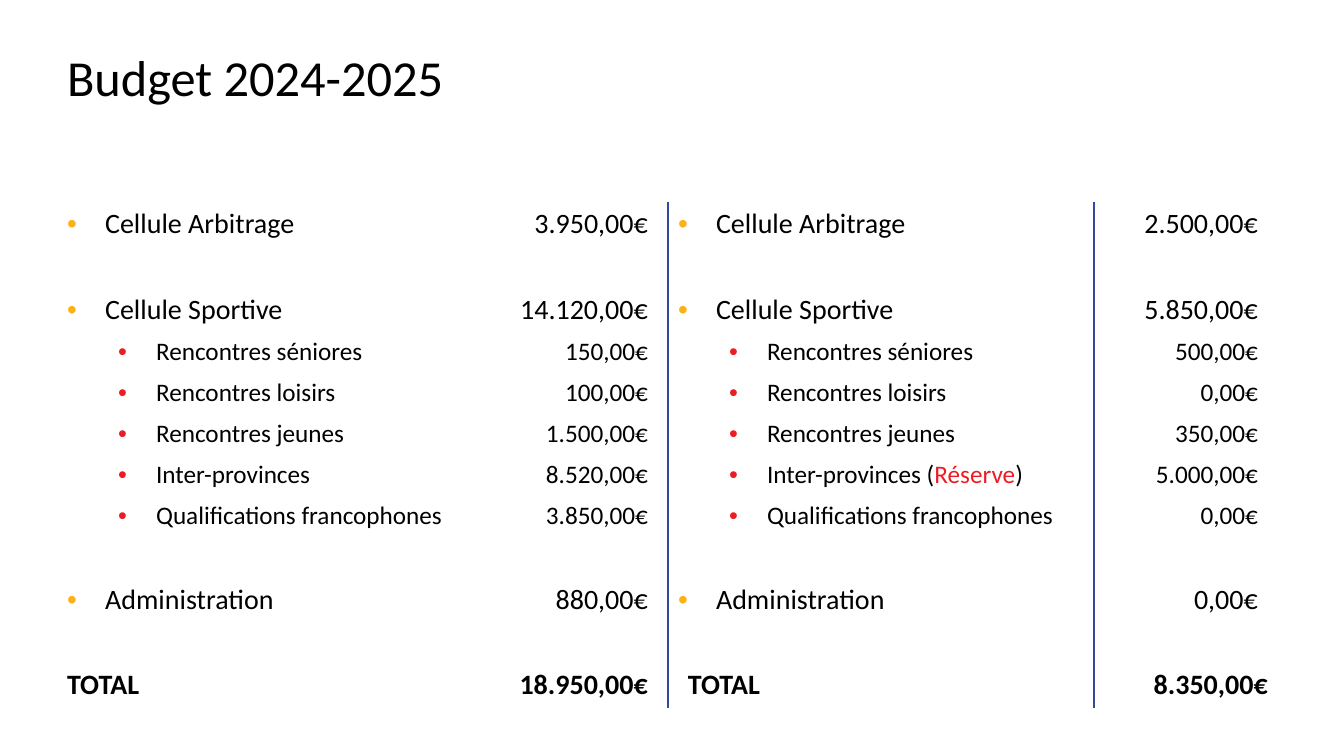
"""Build the 2024-2025 budget slide."""
from dataclasses import dataclass

from lxml.etree import SubElement
from pptx import Presentation
from pptx.dml.color import RGBColor
from pptx.enum.text import MSO_ANCHOR, PP_ALIGN
from pptx.oxml import parse_xml
from pptx.oxml.ns import nsdecls, qn
from pptx.util import Pt

EMU_PER_PX = 914400 / 100.8
PLAIN_TABLE_STYLE = "{2D5ABB26-0587-4C30-8999-92F81FD0307C}"


@dataclass(frozen=True)
class Theme:
    """Colours and type sizes of the slide."""
    font: str = "Calibri"
    text: str = "000000"
    accent: str = "ED1C24"
    group_bullet: str = "FCB116"
    rule: str = "34489E"
    title_size: int = 36
    group_size: int = 20
    item_size: int = 18


@dataclass(frozen=True)
class Entry:
    """One budget row, with an amount for each half of the table."""
    kind: str
    label: str
    left: str
    right: str
    right_note: str = ""


BUDGET = [
    Entry("group", "Cellule Arbitrage", "3.950,00€", "2.500,00€"),
    None,
    Entry("group", "Cellule Sportive", "14.120,00€", "5.850,00€"),
    Entry("item", "Rencontres séniores", "150,00€", "500,00€"),
    Entry("item", "Rencontres loisirs", "100,00€", "0,00€"),
    Entry("item", "Rencontres jeunes", "1.500,00€", "350,00€"),
    Entry("item", "Inter-provinces", "8.520,00€", "5.000,00€", "Réserve"),
    Entry("item", "Qualifications francophones", "3.850,00€", "0,00€"),
    None,
    Entry("group", "Administration", "880,00€", "0,00€"),
    None,
    Entry("total", "TOTAL", "18.950,00€", "8.350,00€"),
]
COLUMN_WIDTHS = [421, 190, 426, 184]
ROW_HEIGHT = 41
RULED_SIDES = {1: ["lnR"], 2: ["lnR", "lnL"], 3: ["lnL"]}


def px(length):
    """Turn pixels into EMU."""
    return round(length * EMU_PER_PX)


class SlideBuilder:
    """Holds the theme and the slide being filled."""

    def __init__(self, slide, theme):
        self.slide = slide
        self.theme = theme

    def style(self, paragraph, size, bold=False):
        """Set the font of a whole paragraph."""
        font = paragraph.font
        font.name, font.size, font.bold = self.theme.font, Pt(size), bold
        font.color.rgb = RGBColor.from_string(self.theme.text)

    def title(self, text, left, top, width, height):
        """Place and format the title placeholder."""
        title = self.slide.shapes.title
        title.left, title.top = px(left), px(top)
        title.width, title.height = px(width), px(height)
        frame = title.text_frame
        frame.text = text
        frame.vertical_anchor = MSO_ANCHOR.MIDDLE
        paragraph = frame.paragraphs[0]
        paragraph.alignment = PP_ALIGN.LEFT
        paragraph.line_spacing = 0.9
        self.style(paragraph, self.theme.title_size)

    def bullet(self, paragraph, indent, color):
        """Give a paragraph a coloured hanging bullet."""
        properties = paragraph._p.get_or_add_pPr()
        properties.set("marL", str(px(indent)))
        properties.set("indent", str(px(-38)))
        bullet_color = SubElement(properties, qn("a:buClr"))
        SubElement(bullet_color, qn("a:srgbClr"), val=color)
        SubElement(properties, qn("a:buFont"), typeface="Arial")
        SubElement(properties, qn("a:buChar"), char="•")

    def border(self, cell, side):
        """Draw a thin rule on one side of a cell."""
        cell._tc.get_or_add_tcPr().insert(0, parse_xml(
            f'<a:{side} {nsdecls("a")} w="12700"><a:solidFill>'
            f'<a:srgbClr val="{self.theme.rule}"/></a:solidFill></a:{side}>'))

    def label(self, cell, entry, note=""):
        """Write a row label, with an optional coloured note in brackets."""
        paragraph = cell.text_frame.paragraphs[0]
        if entry.kind == "group":
            self.bullet(paragraph, 38, self.theme.group_bullet)
        elif entry.kind == "item":
            paragraph.level = 1
            self.bullet(paragraph, 89, self.theme.accent)
        parts = [f"{entry.label} (", note, ")"] if note else [entry.label]
        for part in parts:
            run = paragraph.add_run()
            run.text = part
            if part == note:
                run.font.color.rgb = RGBColor.from_string(self.theme.accent)
        self.style_entry(paragraph, entry)

    def amount(self, cell, entry, text):
        """Write a right-aligned amount."""
        cell.margin_right = px(20)
        paragraph = cell.text_frame.paragraphs[0]
        paragraph.alignment = PP_ALIGN.RIGHT
        paragraph.add_run().text = text
        self.style_entry(paragraph, entry)

    def style_entry(self, paragraph, entry):
        """Set the font that suits the kind of row."""
        theme = self.theme
        size = theme.item_size if entry.kind == "item" else theme.group_size
        self.style(paragraph, size, entry.kind == "total")

    def budget_table(self, entries, left, top):
        """Add the two-part budget table."""
        frame = self.slide.shapes.add_table(
            len(entries), len(COLUMN_WIDTHS), px(left), px(top),
            px(sum(COLUMN_WIDTHS)), px(ROW_HEIGHT * len(entries)))
        table = frame.table
        table.first_row = table.horz_banding = False
        table._tbl.tblPr.find(qn("a:tableStyleId")).text = PLAIN_TABLE_STYLE
        for column, width in zip(table.columns, COLUMN_WIDTHS):
            column.width = px(width)
        for row, entry in zip(table.rows, entries):
            row.height = px(ROW_HEIGHT)
            cells = list(row.cells)
            for index, cell in enumerate(cells):
                cell.fill.background()
                for side in RULED_SIDES.get(index, []):
                    self.border(cell, side)
            if entry is None:
                continue
            self.label(cells[0], entry)
            self.amount(cells[1], entry, entry.left)
            self.label(cells[2], entry, entry.right_note)
            self.amount(cells[3], entry, entry.right)
            if entry.kind == "total":
                cells[2].margin_left = px(20)
                cells[3].margin_right = px(10)


def main():
    """Create and save the presentation."""
    presentation = Presentation()
    presentation.slide_width, presentation.slide_height = px(1344), px(756)
    slide = presentation.slides.add_slide(presentation.slide_layouts[5])
    builder = SlideBuilder(slide, Theme())
    builder.title("Budget 2024-2025", 57, 40, 1232, 80)
    builder.budget_table(BUDGET, 57, 202)
    presentation.save("out.pptx")


if __name__ == "__main__":
    main()
